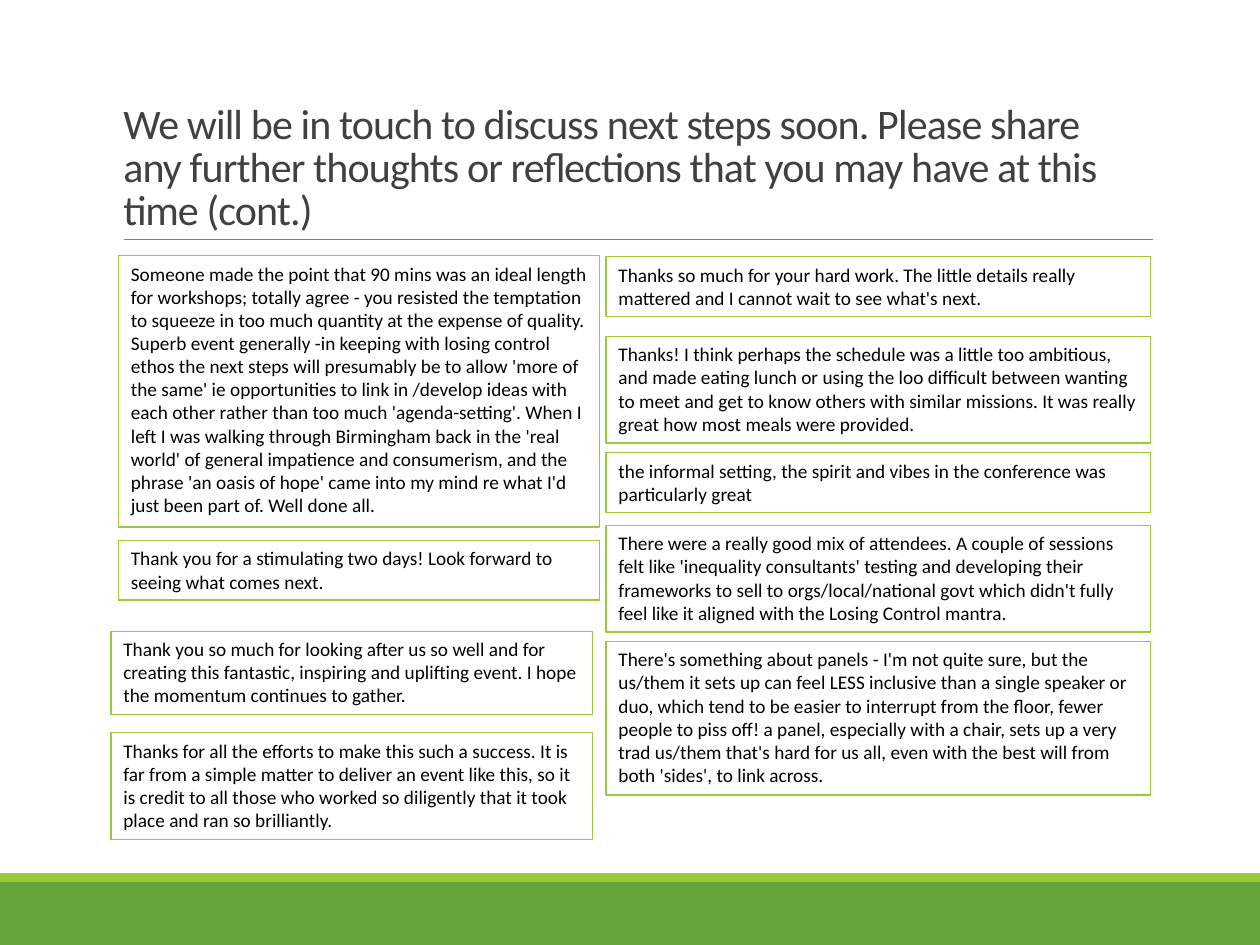
from dataclasses import dataclass

from lxml.etree import SubElement
from pptx import Presentation
from pptx.dml.color import RGBColor
from pptx.enum.shapes import MSO_CONNECTOR as Connector, MSO_SHAPE as Preset
from pptx.enum.text import MSO_ANCHOR as Anchor, MSO_AUTO_SIZE as AutoSize, PP_ALIGN as Align
from pptx.oxml.ns import qn
from pptx.util import Pt


@dataclass(frozen=True)
class Theme:
    font: str = "Calibri"
    title_size: float = 24
    body_size: float = 11
    title: RGBColor = RGBColor.from_string("404040")
    body: RGBColor = RGBColor.from_string("000000")
    band: RGBColor = RGBColor.from_string("63A537")
    accent: RGBColor = RGBColor.from_string("99CB38")
    rule: RGBColor = RGBColor.from_string("808080")


THEME = Theme()
WIDTH, HEIGHT = 720, 540
LINE_HEIGHT, PADDING = 13.43, 7.2

TITLE = (
    "We will be in touch to discuss next steps soon. Please share any further "
    "thoughts or reflections that you may have at this time (cont.)"
)

LEFT_UPPER = [
    (146.2, 11, "Someone made the point that 90 mins was an ideal length for workshops; totally agree - "
     "you resisted the temptation to squeeze in too much quantity at the expense of quality. "
     "Superb event generally -in keeping with losing control ethos the next steps will presumably "
     "be to allow 'more of the same' ie opportunities to link in /develop ideas with each other "
     "rather than too much 'agenda-setting'. When I left I was walking through Birmingham back in "
     "the 'real world' of general impatience and consumerism, and the phrase 'an oasis of hope' "
     "came into my mind re what I'd just been part of. Well done all."),
    (308.9, 2, "Thank you for a stimulating two days! Look forward to seeing what comes next."),
]
LEFT_LOWER = [
    (360.7, 3, "Thank you so much for looking after us so well and for creating this fantastic, "
     "inspiring and uplifting event. I hope the momentum continues to gather."),
    (418.7, 4, "Thanks for all the efforts to make this such a success. It is far from a simple matter "
     "to deliver an event like this, so it is credit to all those who worked so diligently that "
     "it took place and ran so brilliantly."),
]
RIGHT = [
    (146.7, 2, "Thanks so much for your hard work. The little details really mattered and I cannot "
     "wait to see what's next."),
    (192.2, 4, "Thanks! I think perhaps the schedule was a little too ambitious, and made eating lunch "
     "or using the loo difficult between wanting to meet and get to know others with similar "
     "missions. It was really great how most meals were provided."),
    (258.7, 2, "the informal setting, the spirit and vibes in the conference was particularly great"),
    (300.2, 4, "There were a really good mix of attendees. A couple of sessions felt like 'inequality "
     "consultants' testing and developing their frameworks to sell to orgs/local/national govt "
     "which didn't fully feel like it aligned with the Losing Control mantra."),
    (366.5, 6, "There's something about panels - I'm not quite sure, but the us/them it sets up can "
     "feel LESS inclusive than a single speaker or duo, which tend to be easier to interrupt "
     "from the floor, fewer people to piss off! a panel, especially with a chair, sets up a very "
     "trad us/them that's hard for us all, even with the best will from both 'sides', to link "
     "across."),
]


def set_values(target, values):
    for name, value in values.items():
        setattr(target, name, value)


def write(shape, text, size, color, frame_values):
    set_values(shape.text_frame, {"word_wrap": True, **frame_values})
    paragraph = shape.text_frame.paragraphs[0]
    paragraph.alignment = Align.LEFT
    run = paragraph.add_run()
    run.text = text
    set_values(run.font, {"name": THEME.font, "size": Pt(size)})
    run.font.color.rgb = color
    return paragraph, run


def add_rectangle(slide, box):
    shape = slide.shapes.add_shape(Preset.RECTANGLE, *map(Pt, box))
    shape.shadow.inherit = False
    return shape


def add_footer(slide, left, top, width, height):
    strip = 5
    for y, depth, color in (
        (top + strip, height - strip, THEME.band),
        (top, strip, THEME.accent),
    ):
        shape = add_rectangle(slide, (left, y, width, depth))
        shape.fill.solid()
        shape.fill.fore_color.rgb = color
        shape.line.fill.background()


def add_title(slide, left, top, width, height):
    box = slide.shapes.add_textbox(*map(Pt, (left, top, width, height)))
    paragraph, run = write(box, TITLE, THEME.title_size, THEME.title,
                           {"vertical_anchor": Anchor.BOTTOM})
    paragraph.line_spacing = 0.85
    run.font._element.set("spc", "-50")

    start, y = left + 7.2, top + height - 0.5
    rule = slide.shapes.add_connector(
        Connector.STRAIGHT, Pt(start), Pt(y), Pt(start + 588.2), Pt(y))
    rule.line.color.rgb = THEME.rule
    rule.line.width = Pt(0.5)
    SubElement(rule._element.spPr, qn("a:effectLst"))


def add_comments(slide, left, width, comments):
    for top, lines, text in comments:
        height = lines * LINE_HEIGHT + PADDING
        shape = add_rectangle(slide, (left, top, width, height))
        shape.fill.background()
        shape.line.color.rgb = THEME.accent
        shape.line.width = Pt(0.75)
        write(shape, text, THEME.body_size, THEME.body,
              {"vertical_anchor": Anchor.TOP, "auto_size": AutoSize.SHAPE_TO_FIT_TEXT})


def main():
    presentation = Presentation()
    set_values(presentation, {"slide_width": Pt(WIDTH), "slide_height": Pt(HEIGHT)})
    slide = presentation.slides.add_slide(presentation.slide_layouts[6])
    add_footer(slide, 0, HEIGHT - 41, WIDTH, 41)
    add_title(slide, 63.4, 23, 594, 114.3)
    add_comments(slide, 67.7, 275, LEFT_UPPER)
    add_comments(slide, 63.4, 275, LEFT_LOWER)
    add_comments(slide, 346.3, 311, RIGHT)
    presentation.save("out.pptx")


if __name__ == "__main__":
    main()
